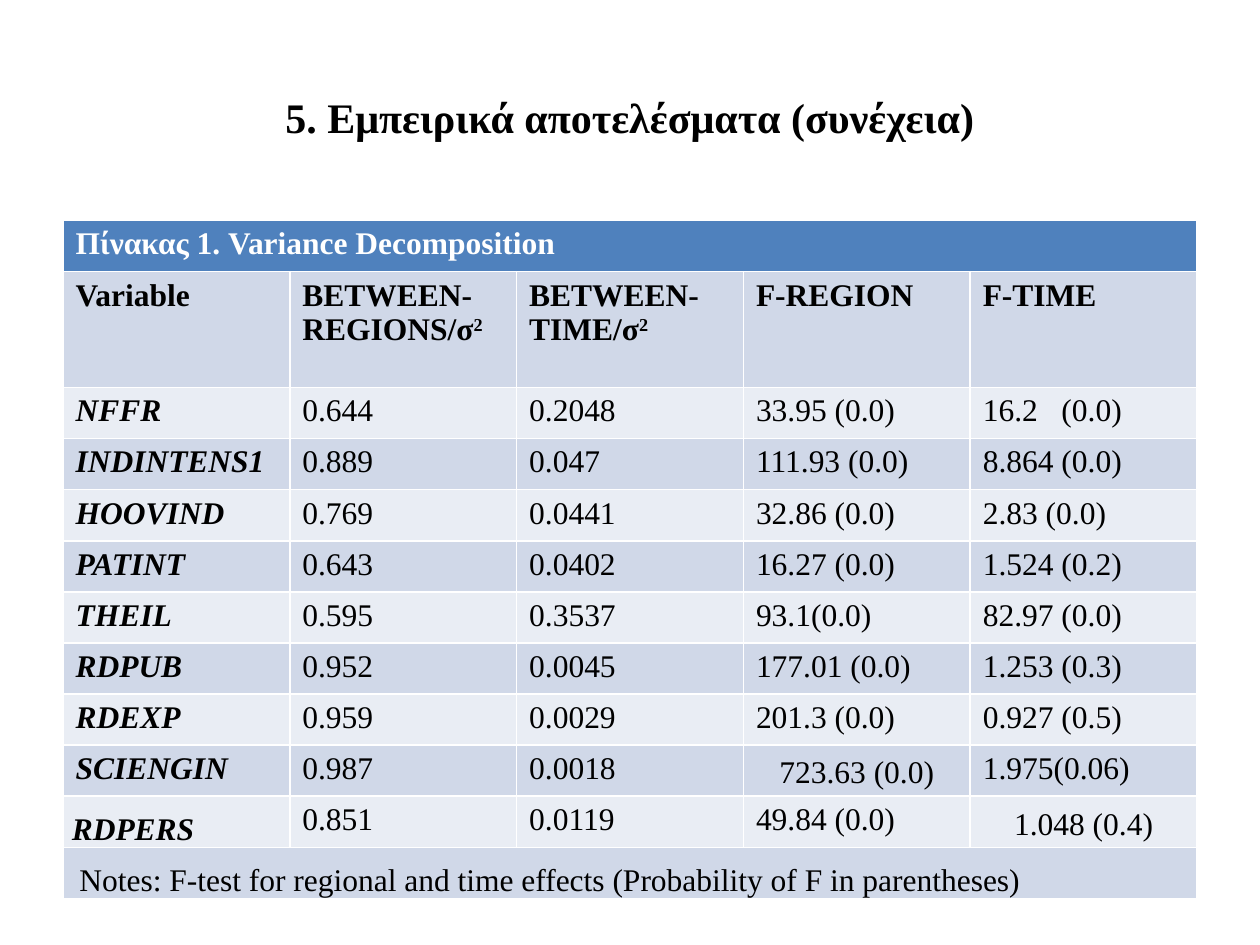
from pptx import Presentation
from pptx.dml.color import RGBColor
from pptx.enum import text
from pptx.util import Inches, Pt

FONT = "Times New Roman"
BLACK = RGBColor(0x00, 0x00, 0x00)
WHITE = RGBColor(0xFF, 0xFF, 0xFF)
HEADER_BLUE = RGBColor(0x4F, 0x81, 0xBD)
BANDS = (RGBColor(0xE9, 0xED, 0xF4), RGBColor(0xD0, 0xD8, 0xE8))

TITLE = "5. Εμπειρικά αποτελέσματα (συνέχεια)"
CAPTION = "Πίνακας 1. Variance Decomposition"
HEADINGS = ["Variable", "BETWEEN-REGIONS/σ²", "BETWEEN- TIME/σ²", "F-REGION", "F-TIME"]
RESULTS = [
    ["NFFR", "0.644", "0.2048", "33.95 (0.0)", "16.2   (0.0)"],
    ["INDINTENS1", "0.889", "0.047", "111.93 (0.0)", "8.864 (0.0)"],
    ["HOOVIND", "0.769", "0.0441", "32.86 (0.0)", "2.83 (0.0)"],
    ["PATINT", "0.643", "0.0402", "16.27 (0.0)", "1.524 (0.2)"],
    ["THEIL", "0.595", "0.3537", "93.1(0.0)", "82.97 (0.0)"],
    ["RDPUB", "0.952", "0.0045", "177.01 (0.0)", "1.253 (0.3)"],
    ["RDEXP", "0.959", "0.0029", "201.3 (0.0)", "0.927 (0.5)"],
    ["SCIENGIN", "0.987", "0.0018", "723.63 (0.0)", "1.975(0.06)"],
    ["RDPERS", "0.851", "0.0119", "49.84 (0.0)", "1.048 (0.4)"],
]
NOTES = "Notes: F-test for regional and time effects (Probability of F in parentheses)"
ROWS = [[CAPTION], HEADINGS, *RESULTS, [NOTES]]
LAST = len(ROWS) - 1
ROW_HEIGHT = Pt(29.2)
HEADING_HEIGHT = Inches(0.92)

MIDDLE = (text.MSO_ANCHOR.MIDDLE, text.PP_ALIGN.CENTER, 0.07)
BOTTOM = (text.MSO_ANCHOR.BOTTOM, text.PP_ALIGN.LEFT, 0.07)
TIGHT_CELLS = {
    (LAST - 2, 3): MIDDLE,
    (LAST - 1, 0): BOTTOM,
    (LAST - 1, 4): MIDDLE,
    (LAST, 0): (text.MSO_ANCHOR.BOTTOM, text.PP_ALIGN.LEFT, 0.13),
}


def style(paragraph, size, color, bold=False, italic=False):
    font = paragraph.font
    font.name, font.size = FONT, Pt(size)
    font.bold, font.italic = bold, italic
    font.color.rgb = color


def write(paragraph, words):
    base, square, _ = words.partition("²")
    paragraph.add_run().text = base
    if square:
        exponent = paragraph.add_run()
        exponent.text = "2"
        exponent.font._element.set("baseline", "30000")


def tighten(cell, anchor, alignment, left):
    cell.vertical_anchor = anchor
    cell.margin_left, cell.margin_right = Inches(left), Inches(0.07)
    cell.margin_top = cell.margin_bottom = 0
    paragraph = cell.text_frame.paragraphs[0]
    paragraph.alignment = alignment
    paragraph.line_spacing = 1.15


def add_title(slide):
    box = slide.shapes.add_textbox(Inches(0.5), Inches(0.3), Inches(9), Inches(1.25))
    frame = box.text_frame
    frame.word_wrap = True
    frame.vertical_anchor = text.MSO_ANCHOR.MIDDLE
    paragraph = frame.paragraphs[0]
    paragraph.alignment = text.PP_ALIGN.CENTER
    write(paragraph, TITLE)
    style(paragraph, 24, BLACK, bold=True)


def add_results(slide):
    height = HEADING_HEIGHT + ROW_HEIGHT * LAST
    table = slide.shapes.add_table(
        len(ROWS), len(HEADINGS), Inches(0.5), Inches(1.75), Inches(9), height
    ).table
    for r, values in enumerate(ROWS):
        table.rows[r].height = HEADING_HEIGHT if r == 1 else ROW_HEIGHT
        for cell in table.rows[r].cells:
            cell.fill.solid()
            cell.fill.fore_color.rgb = BANDS[r % 2] if r else HEADER_BLUE
        if len(values) == 1:
            table.cell(r, 0).merge(table.cell(r, len(HEADINGS) - 1))
        for c, value in enumerate(values):
            cell = table.cell(r, c)
            paragraph = cell.text_frame.paragraphs[0]
            write(paragraph, value)
            variable = c == 0 and 1 < r < LAST
            style(paragraph, 18, BLACK if r else WHITE, r < 2 or variable, variable)
            if (r, c) in TIGHT_CELLS:
                tighten(cell, *TIGHT_CELLS[r, c])


def main():
    presentation = Presentation()
    presentation.slide_width, presentation.slide_height = Inches(10), Inches(7.5)
    slide = presentation.slides.add_slide(presentation.slide_layouts[6])
    add_title(slide)
    add_results(slide)
    presentation.save("out.pptx")


if __name__ == "__main__":
    main()
